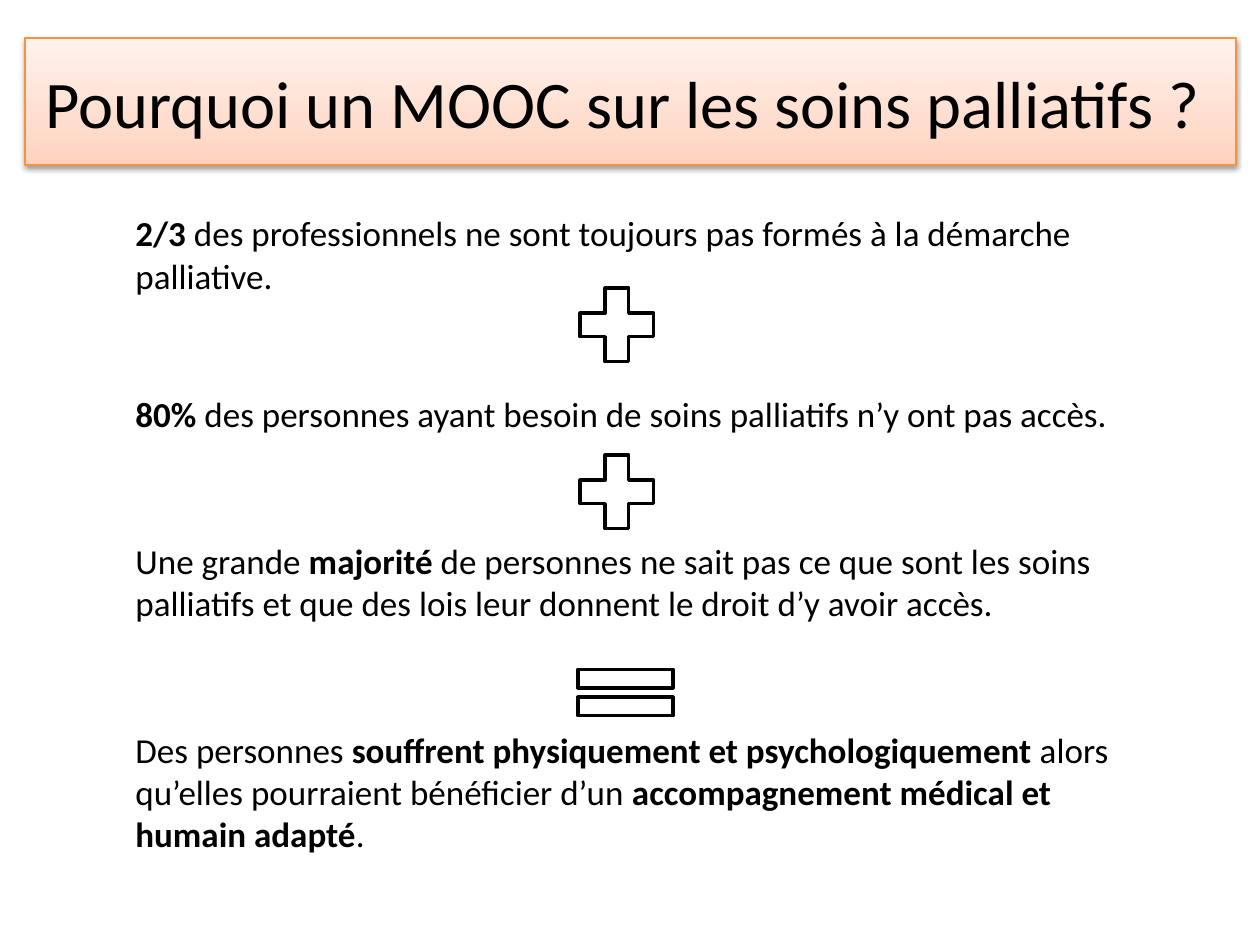
from copy import deepcopy

from pptx import Presentation
from pptx.dml.color import RGBColor
from pptx.enum.shapes import MSO_SHAPE as Shape
from pptx.enum.text import MSO_ANCHOR as Anchor, PP_ALIGN as Align
from pptx.oxml.ns import qn
from pptx.oxml import parse_xml
from pptx.util import Emu, Pt

PX = 914400 / 126
FONT = "Calibri"
COLORS = {
    "black": "000000",
    "white": "FFFFFF",
    "banner_line": "F69240",
    "banner_bottom": "FFD2BD",
    "banner_middle": "FFDED0",
    "banner_top": "FFF2ED",
}
TITLE = "Pourquoi un MOOC sur les soins palliatifs ? "

# Each statement: space before in points, then (text, bold) runs.
STATEMENTS = [
    (0, [("2/3", True),
         (" des professionnels ne sont toujours pas formés à la démarche palliative.", False)]),
    (55, [("80%", True),
          (" des personnes ayant besoin de soins palliatifs n’y ont pas accès.", False)]),
    (60, [("Une grande ", False), ("majorité", True),
          (" de personnes ne sait pas ce que sont les soins palliatifs"
           " et que des lois leur donnent le droit d’y avoir accès.", False)]),
    (60, [("Des personnes ", False),
          ("souffrent physiquement et psychologiquement ", True),
          ("alors qu’elles pourraient bénéficier d’un ", False),
          ("accompagnement médical et humain adapté", True), (".", False)]),
]
OPERATORS = [
    (Shape.MATH_PLUS, 567, 275, 100, 100),
    (Shape.MATH_PLUS, 567, 442, 100, 100),
    (Shape.MATH_EQUAL, 561, 653, 129, 79),
]


def px(value):
    return Emu(round(value * PX))


def rgb(name):
    return RGBColor.from_string(COLORS[name])


def add_shape(slide, kind, left, top, width, height, fill=None, line="black", weight=0.75):
    shape = slide.shapes.add_shape(kind, px(left), px(top), px(width), px(height))
    shape.shadow.inherit = False
    if fill:
        shape.fill.solid()
        shape.fill.fore_color.rgb = rgb(fill)
    else:
        shape.fill.background()
    shape.line.color.rgb = rgb(line)
    shape.line.width = Pt(weight)
    return shape


def write_paragraph(paragraph, runs, size=20, color="black", align=Align.LEFT, space_before=0):
    paragraph.alignment = align
    paragraph.space_before = Pt(space_before)
    for text, bold in runs:
        run = paragraph.add_run()
        run.text = text
        run.font.name = FONT
        run.font.size = Pt(size)
        run.font.bold = bold
        run.font.color.rgb = rgb(color)


def fill_banner(shape):
    """Give the banner its three-stop gradient, running upwards."""
    shape.fill.gradient()
    shape.fill.gradient_angle = 90
    stop_list = shape._element.spPr.find(qn("a:gradFill")).find(qn("a:gsLst"))
    stop_list.insert(1, deepcopy(stop_list[0]))
    names = ("banner_bottom", "banner_middle", "banner_top")
    for stop, name, position in zip(shape.fill.gradient_stops, names, (0, 0.35, 1)):
        stop.color.rgb = rgb(name)
        stop.position = position


def add_soft_shadow(shape):
    effects = shape._element.spPr.find(qn("a:effectLst"))
    effects.append(parse_xml(
        '<a:outerShdw xmlns:a="http://schemas.openxmlformats.org/drawingml/2006/main"'
        f' blurRad="{Pt(3.1)}" dist="{Pt(1.6)}" dir="5400000" rotWithShape="0">'
        f'<a:srgbClr val="{COLORS["black"]}"><a:alpha val="38000"/></a:srgbClr>'
        '</a:outerShdw>'))


def add_title(slide):
    banner = add_shape(slide, Shape.RECTANGLE, 25, 38, 1211, 127, line="banner_line")
    fill_banner(banner)
    add_soft_shadow(banner)
    frame = banner.text_frame
    frame.word_wrap = True
    frame.vertical_anchor = Anchor.MIDDLE
    write_paragraph(frame.paragraphs[0], [(TITLE, False)], size=38, align=Align.CENTER)


def add_statements(slide):
    body = add_shape(slide, Shape.RECTANGLE, 123, 204, 1012, 674, line="white")
    frame = body.text_frame
    frame.word_wrap = True
    frame.vertical_anchor = Anchor.TOP
    frame.margin_top = px(8)
    for index, (space_before, runs) in enumerate(STATEMENTS):
        paragraph = frame.add_paragraph() if index else frame.paragraphs[0]
        write_paragraph(paragraph, runs, space_before=space_before)


def main():
    presentation = Presentation()
    presentation.slide_width, presentation.slide_height = px(1260), px(945)
    slide = presentation.slides.add_slide(presentation.slide_layouts[6])
    add_title(slide)
    add_statements(slide)
    for kind, *box in OPERATORS:
        add_shape(slide, kind, *box, fill="white", weight=2)
    presentation.save("out.pptx")


if __name__ == "__main__":
    main()
